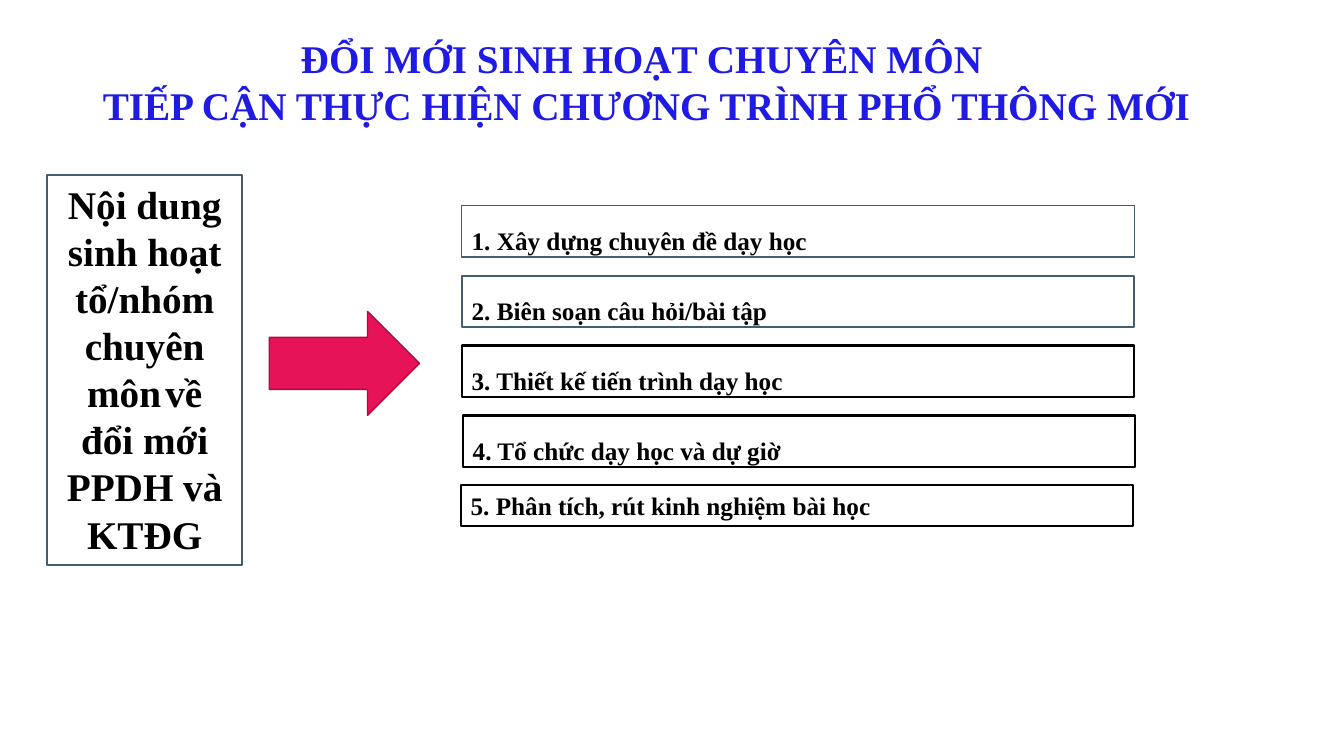
from pptx import Presentation
from pptx.dml.color import RGBColor
from pptx.enum.shapes import MSO_SHAPE
from pptx.enum.text import MSO_ANCHOR, MSO_AUTO_SIZE, PP_ALIGN
from pptx.util import Inches, Pt

RECTANGLE = MSO_SHAPE.RECTANGLE
RIGHT_ARROW = MSO_SHAPE.RIGHT_ARROW
TOP = MSO_ANCHOR.TOP
NO_FIT = MSO_AUTO_SIZE.NONE
CENTER, JUSTIFY, LEFT = PP_ALIGN.CENTER, PP_ALIGN.JUSTIFY, PP_ALIGN.LEFT
TITLE_ONLY = 5
WHITE, BLACK, SLATE = "FFFFFF", "000000", "435E71"
BLUE, PINK, DARK_PINK = "1F1BE4", "E61358", "AA0E41"


def color(hex_code):
    """Turn a hex string into a colour."""
    return RGBColor.from_string(hex_code)


class SlideBuilder:
    """Holds the text style and the current slide."""

    font_name = "Times New Roman"

    def __init__(self, page):
        """Remember the slide to draw on."""
        self.page = page

    def style_span(self, span, size, hex_code):
        """Give a run the bold slide font."""
        span.font.name = self.font_name
        span.font.size = Pt(size)
        span.font.bold = True
        span.font.color.rgb = color(hex_code)

    def title(self, text, left, top, width, height):
        """Move and format the title placeholder."""
        box = self.page.shapes.title
        box.left, box.top = Inches(left), Inches(top)
        box.width, box.height = Inches(width), Inches(height)
        frame = box.text_frame
        frame.text = text
        frame.word_wrap = False
        frame.auto_size = NO_FIT
        frame.vertical_anchor = TOP
        for para in frame.paragraphs:
            para.alignment = CENTER
            for span in para.runs:
                self.style_span(span, 28, BLUE)

    def shape(self, kind, left, top, width, height, fill, line, weight):
        """Add a flat preset shape; a fill of None leaves it empty."""
        shape = self.page.shapes.add_shape(
            kind, Inches(left), Inches(top), Inches(width), Inches(height))
        shape.shadow.inherit = False
        if fill:
            shape.fill.solid()
            shape.fill.fore_color.rgb = color(fill)
        else:
            shape.fill.background()
        shape.line.color.rgb = color(line)
        shape.line.width = Pt(weight)
        return shape

    def text_box(self, spans, align, left, top, width, height, fill, line, weight):
        """Add a rectangle with a paragraph of (text, size) spans."""
        box = self.shape(RECTANGLE, left, top, width, height, fill, line, weight)
        frame = box.text_frame
        frame.word_wrap = True
        frame.vertical_anchor = TOP
        para = frame.paragraphs[0]
        para.alignment = align
        for text, size in spans:
            span = para.add_run()
            span.text = text
            self.style_span(span, size, BLACK)
        return para


def main():
    """Build and save the slide."""
    deck = Presentation()
    deck.slide_width, deck.slide_height = Inches(13.33), Inches(7.5)
    builder = SlideBuilder(deck.slides.add_slide(deck.slide_layouts[TITLE_ONLY]))

    builder.title("ĐỔI MỚI SINH HOẠT CHUYÊN MÔN \n"
                  "TIẾP CẬN THỰC HIỆN CHƯƠNG TRÌNH PHỔ THÔNG MỚI",
                  0.86, 0.29, 11.1, 1.04)

    topic = [("Nội dung sinh hoạt tổ/nhóm chuyên môn", 28), (" ", 12),
             ("về đổi mới PPDH và KTĐG", 28)]
    builder.text_box(topic, CENTER, 0.47, 1.74, 1.93, 3.87, WHITE, SLATE, 1.5)

    steps = [
        ("1. Xây dựng chuyên đề dạy học", 4.58, 0.51, WHITE, SLATE, 1),
        ("2. Biên soạn câu hỏi/bài tập", 4.58, 0.51, WHITE, SLATE, 1.5),
        ("3. Thiết kế tiến trình dạy học", 4.58, 0.51, None, BLACK, 1.5),
        ("4. Tổ chức dạy học và dự giờ", 4.59, 0.51, None, BLACK, 1.5),
        ("5. Phân tích, rút kinh nghiệm bài học", 4.57, 0.4, None, BLACK, 1.5),
    ]
    first_top, pitch = 2.04, 0.694
    for index, (text, left, height, fill, line, weight) in enumerate(steps):
        is_last = index == len(steps) - 1
        para = builder.text_box(
            [(text, 18)], LEFT if is_last else JUSTIFY,
            left, first_top + index * pitch, 6.67, height, fill, line, weight)
        if not is_last:
            para.line_spacing = 1.5
            para.space_before = para.space_after = Pt(6)

    builder.shape(RIGHT_ARROW, 2.67, 3.09, 1.49, 1.03, PINK, DARK_PINK, 1)
    deck.save("out.pptx")


if __name__ == "__main__":
    main()
